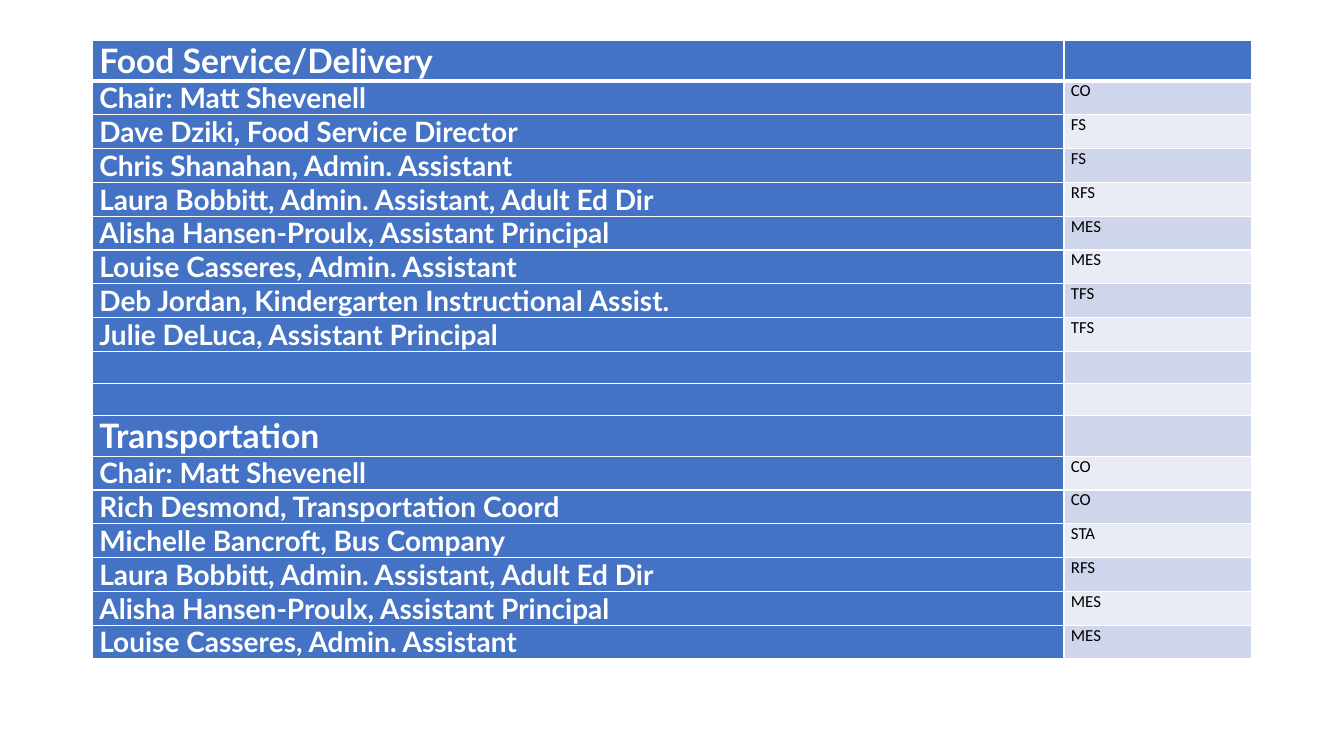
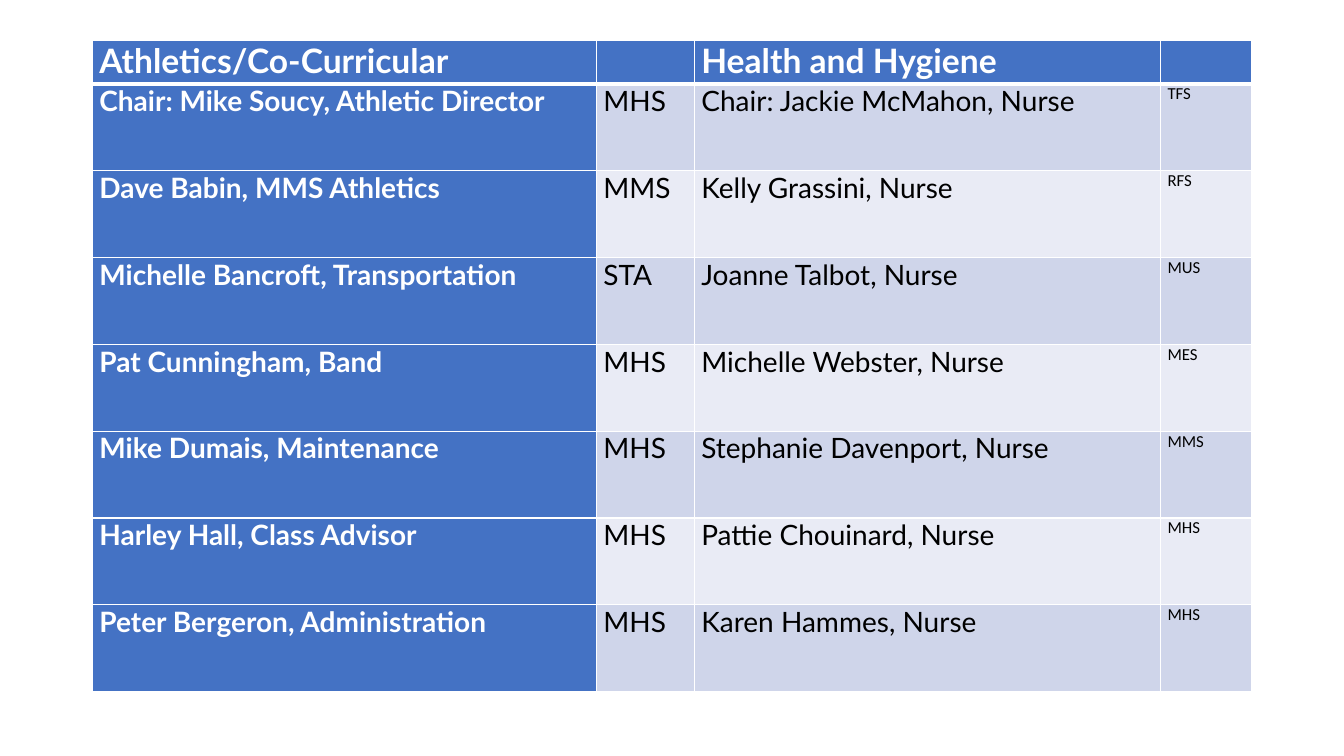
from lxml.etree import SubElement
from pptx import Presentation
from pptx.dml.color import RGBColor as RGB
from pptx.oxml.ns import qn
from pptx.util import Pt

COLORS = {"head": "4472C4", "odd": "CFD5EA", "even": "E9EBF5",
          "light": "FFFFFF", "text": "000000"}

FOOD = [
    ("Chair: Matt Shevenell", "CO"),
    ("Dave Dziki, Food Service Director", "FS"),
    ("Chris Shanahan, Admin. Assistant", "FS"),
    ("Laura Bobbitt, Admin. Assistant, Adult Ed Dir", "RFS"),
    ("Alisha Hansen-Proulx, Assistant Principal", "MES"),
    ("Louise Casseres, Admin. Assistant", "MES"),
    ("Deb Jordan, Kindergarten Instructional Assist.", "TFS"),
    ("Julie DeLuca, Assistant Principal", "TFS"),
]
TRANSPORT = [
    ("Chair: Matt Shevenell", "CO"),
    ("Rich Desmond, Transportation Coord", "CO"),
    ("Michelle Bancroft, Bus Company", "STA"),
    ("Laura Bobbitt, Admin. Assistant, Adult Ed Dir", "RFS"),
    ("Alisha Hansen-Proulx, Assistant Principal", "MES"),
    ("Louise Casseres, Admin. Assistant", "MES"),
]
ATHLETICS_AND_HEALTH = [
    ("Athletics/Co-Curricular", "", "Health and Hygiene", ""),
    ("Chair: Mike Soucy, Athletic Director", "MHS", "Chair: Jackie McMahon, Nurse", "TFS"),
    ("Dave Babin, MMS Athletics", "MMS", "Kelly Grassini, Nurse", "RFS"),
    ("Michelle Bancroft, Transportation", "STA", "Joanne Talbot, Nurse", "MUS"),
    ("Pat Cunningham, Band", "MHS", "Michelle Webster, Nurse", "MES"),
    ("Mike Dumais, Maintenance", "MHS", "Stephanie Davenport, Nurse", "MMS"),
    ("Harley Hall, Class Advisor", "MHS", "Pattie Chouinard, Nurse", "MHS"),
    ("Peter Bergeron, Administration", "MHS", "Karen Hammes, Nurse", "MHS"),
]


class Deck:
    LEFT, TOP, INSET = 66, 29, 5

    def __init__(self):
        self.prs = Presentation()
        self.prs.slide_width, self.prs.slide_height = Pt(960), Pt(540)
        self.s = None

    def slide(self):
        self.s = self.prs.slides.add_slide(self.prs.slide_layouts[6])

    def borders(self, cell, top, bottom):
        """Draw white cell edges; top and bottom are widths in points."""
        tc_pr = cell._tc.get_or_add_tcPr()
        for side, width in (("L", 1), ("R", 1), ("T", top), ("B", bottom)):
            ln = SubElement(tc_pr, qn(f"a:ln{side}"), w=str(Pt(width)))
            fill = SubElement(ln, qn("a:solidFill"))
            SubElement(fill, qn("a:srgbClr"), val=COLORS["light"])

    def cell(self, cell, text, fill, size, bold, font):
        cell.margin_left = cell.margin_right = Pt(self.INSET)
        cell.margin_top = cell.margin_bottom = 0
        cell.fill.solid()
        cell.fill.fore_color.rgb = RGB.from_string(COLORS[fill])
        if not text:
            return
        p = cell.text_frame.paragraphs[0]
        p.text = text
        p.font.name, p.font.size, p.font.bold = font, Pt(size), bold
        p.font.color.rgb = RGB.from_string(COLORS["light" if bold else "text"])

    def roster(self, rows, widths, heights, titles=(0,)):
        """Table of names whose last column holds small school codes."""
        table = self.s.shapes.add_table(
            len(rows), len(widths), Pt(self.LEFT), Pt(self.TOP),
            Pt(sum(widths)), Pt(sum(heights))).table
        table.first_col = True
        for column, width in zip(table.columns, widths):
            column.width = Pt(width)
        for i, (row, height) in enumerate(zip(rows, heights)):
            table.rows[i].height = Pt(height)
            for j, text in enumerate(row):
                head = i == 0 or j == 0
                code = j == len(row) - 1
                fill = "head" if head else "odd" if i % 2 else "even"
                size = 24 if i in titles else 12 if code else 20
                cell = table.cell(i, j)
                self.borders(cell, 3 if i == 1 else 1, 3 if i == 0 else 1)
                self.cell(cell, text, fill, size, head, "Calibri" if code else "Lato")


def main():
    deck = Deck()

    deck.slide()
    blank = ("", "")
    rows = [("Food Service/Delivery", ""), *FOOD, blank, blank,
            ("Transportation", ""), *TRANSPORT]
    deck.roster(rows, [694, 134], [23] * len(rows), titles=(0, len(FOOD) + 3))

    deck.slide()
    deck.roster(ATHLETICS_AND_HEALTH, [360, 70, 333, 65],
                [31] + [62] * (len(ATHLETICS_AND_HEALTH) - 1))

    deck.prs.save("out.pptx")


if __name__ == "__main__":
    main()
